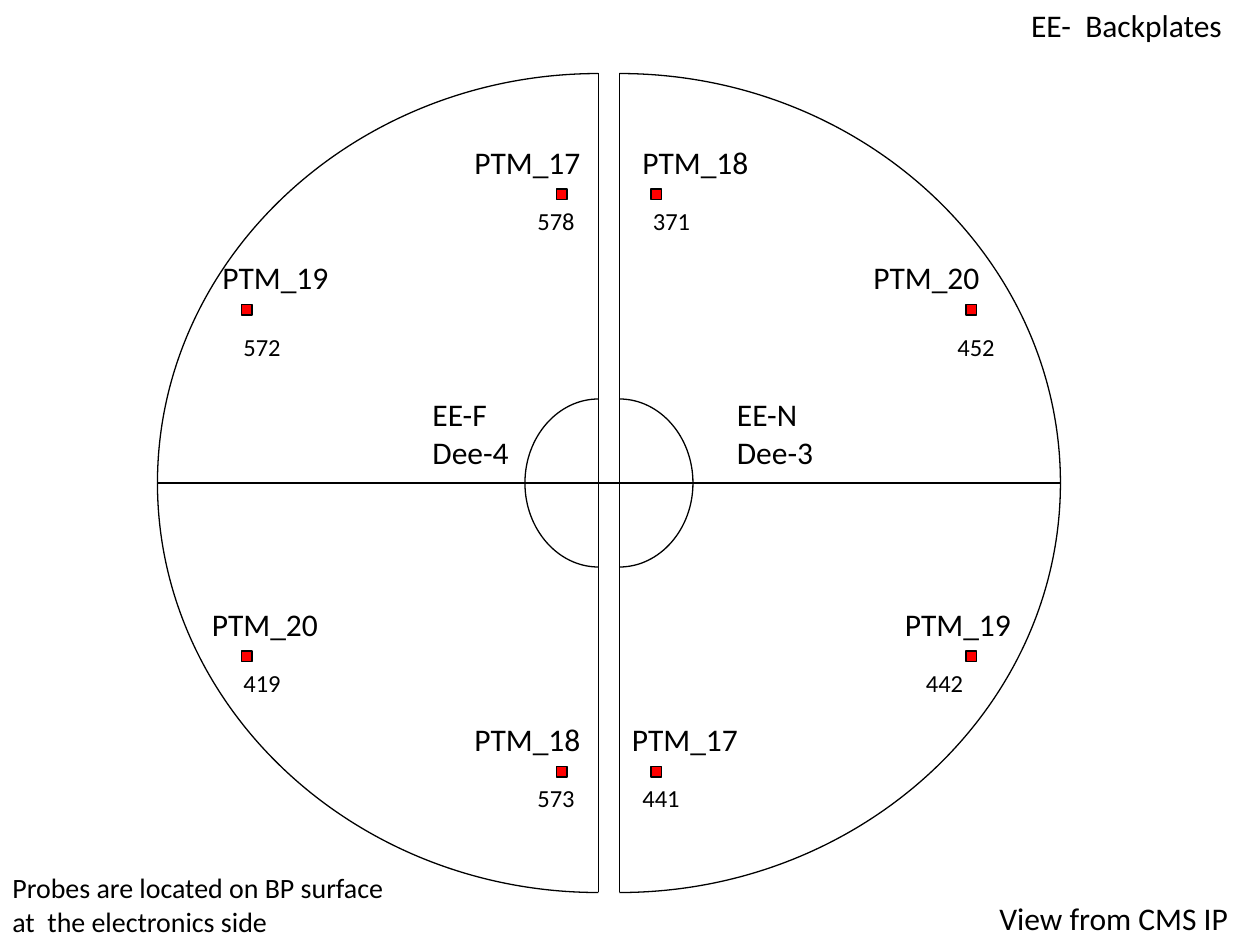
from pptx import Presentation
from pptx.dml.color import RGBColor
from pptx.enum.shapes import MSO_CONNECTOR, MSO_SHAPE
from pptx.enum.text import MSO_ANCHOR, MSO_AUTO_SIZE, PP_ALIGN
from pptx.oxml.ns import qn
from pptx.util import Pt

# Content: all places are in points
TITLE = ("EE-  Backplates", 582, 0, 124.5, 29)
NOTES = [  # lines, left, top, width, height, size
    (["EE-F", "Dee-4"], 240, 222, 59, 51, 18),
    (["EE-N", "Dee-3"], 414, 222, 59, 51, 18),
    (["View from CMS IP"], 564, 510, 147, 29, 18),
    (["Probes are located on BP surface", "at  the electronics side"],
     0, 494, 229.7, 46, 16),
]
PROBES = [  # name, value, square left and top, name left, value left
    ("PTM_17", "578", 318, 108, 264, 300),
    ("PTM_19", "572", 138, 174, 120, 132),
    ("PTM_20", "419", 138, 372, 114, 132),
    ("PTM_18", "573", 318, 438, 264, 300),
    ("PTM_18", "371", 372, 108, 360, 366),
    ("PTM_20", "452", 552, 174, 492, 540),
    ("PTM_19", "442", 552, 372, 510, 522),
    ("PTM_17", "441", 372, 438, 354, 360),
]
DEES = [(342, -1), (354, 1)]  # straight edge, side it bulges to
RINGS = [(252, 234), (42, 48)]  # outer and inner radii
MID = 276
AXES = [(90, 402), (606, 294)]
SIDE = 6
CURVE = 0.55  # control point share for a quarter ellipse
FONT, BLACK, RED = "Calibri", "000000", "FF0000"


def color(code):
    return RGBColor.from_string(code)


def edge(shape):
    shape.line.color.rgb = color(BLACK)
    shape.line.width = Pt(0.75)


def line(shapes, x1, y1, x2, y2):
    rule = shapes.add_connector(
        MSO_CONNECTOR.STRAIGHT, Pt(x1), Pt(y1), Pt(x2), Pt(y2))
    edge(rule)
    props = rule._element.spPr
    props.append(props.makeelement(qn("a:effectLst"), {}))


def arc(shapes, x, rx, ry):
    """Draw a quarter ellipse from above or below x round to the middle."""
    points = [(x + CURVE * rx, MID + ry),
              (x + rx, MID + CURVE * ry), (x + rx, MID)]
    pen = shapes.build_freeform(Pt(x), Pt(MID + ry))
    pen.add_line_segments([(Pt(a), Pt(b)) for a, b in points], close=False)
    shape = pen.convert_to_shape()
    shape.shadow.inherit = False
    shape.fill.background()
    edge(shape)
    # Turn the three straight steps into one Bezier curve
    path = next(shape._element.iter(qn("a:path")))
    bend = path.makeelement(qn("a:cubicBezTo"), {})
    for step in path.findall(qn("a:lnTo")):
        bend.append(step[0])
        path.remove(step)
    path.append(bend)


def write(box, lines, size):
    frame = box.text_frame
    frame.text = "\n".join(lines)
    frame.word_wrap = False
    frame.auto_size = MSO_AUTO_SIZE.SHAPE_TO_FIT_TEXT
    frame.vertical_anchor = MSO_ANCHOR.TOP
    for para in frame.paragraphs:
        para.alignment = PP_ALIGN.LEFT
        para.font.name = FONT
        para.font.size = Pt(size)
        para.font.color.rgb = color(BLACK)


def label(shapes, lines, x, y, w, h, size):
    write(shapes.add_textbox(Pt(x), Pt(y), Pt(w), Pt(h)), lines, size)


def main():
    deck = Presentation()
    deck.slide_width, deck.slide_height = Pt(720), Pt(540)
    slide = deck.slides.add_slide(deck.slide_layouts[5])
    shapes = slide.shapes

    # Title
    text, x, y, w, h = TITLE
    title = shapes.title
    title.left, title.top, title.width, title.height = map(Pt, (x, y, w, h))
    write(title, [text], 18)

    # Half discs and the middle axis
    for x, way in DEES:
        group = shapes.add_group_shape().shapes
        for rx, ry in RINGS:
            for turn in (-1, 1):
                arc(group, x, way * rx, turn * ry)
        reach = RINGS[0][1]
        line(group, x, MID - reach, x, MID + reach)
    for start, end in AXES:
        line(shapes, start, MID, end, MID)

    # Probes with name above and value below
    for name, value, x, y, left, under in PROBES:
        mark = shapes.add_shape(
            MSO_SHAPE.RECTANGLE, Pt(x), Pt(y), Pt(SIDE), Pt(SIDE))
        mark.shadow.inherit = False
        mark.fill.solid()
        mark.fill.fore_color.rgb = color(RED)
        edge(mark)
        drop = 12 if y == 174 else 6
        label(shapes, [name], left, y - 30, 75.6, 29, 18)
        label(shapes, [value], under, y + drop, 36, 24.2, 14)

    # Notes
    for note in NOTES:
        label(shapes, *note)

    deck.save("out.pptx")


if __name__ == "__main__":
    main()
